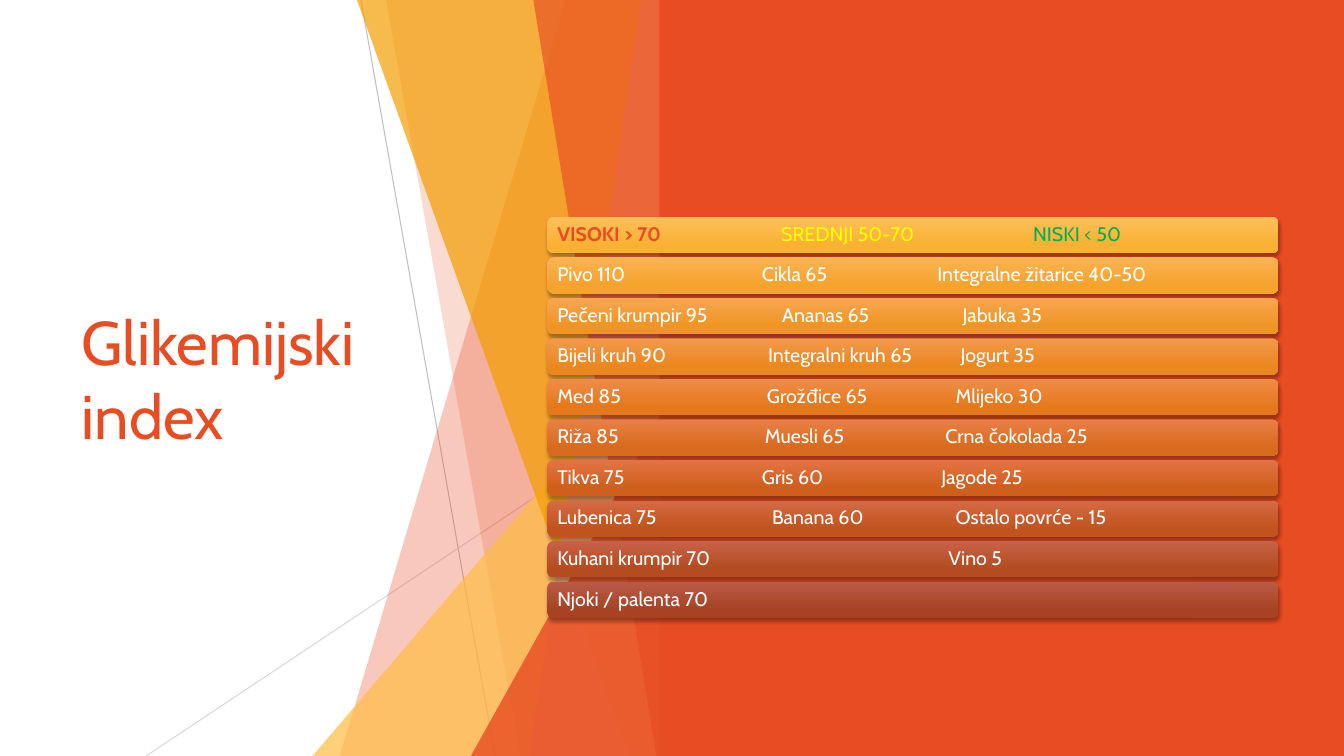
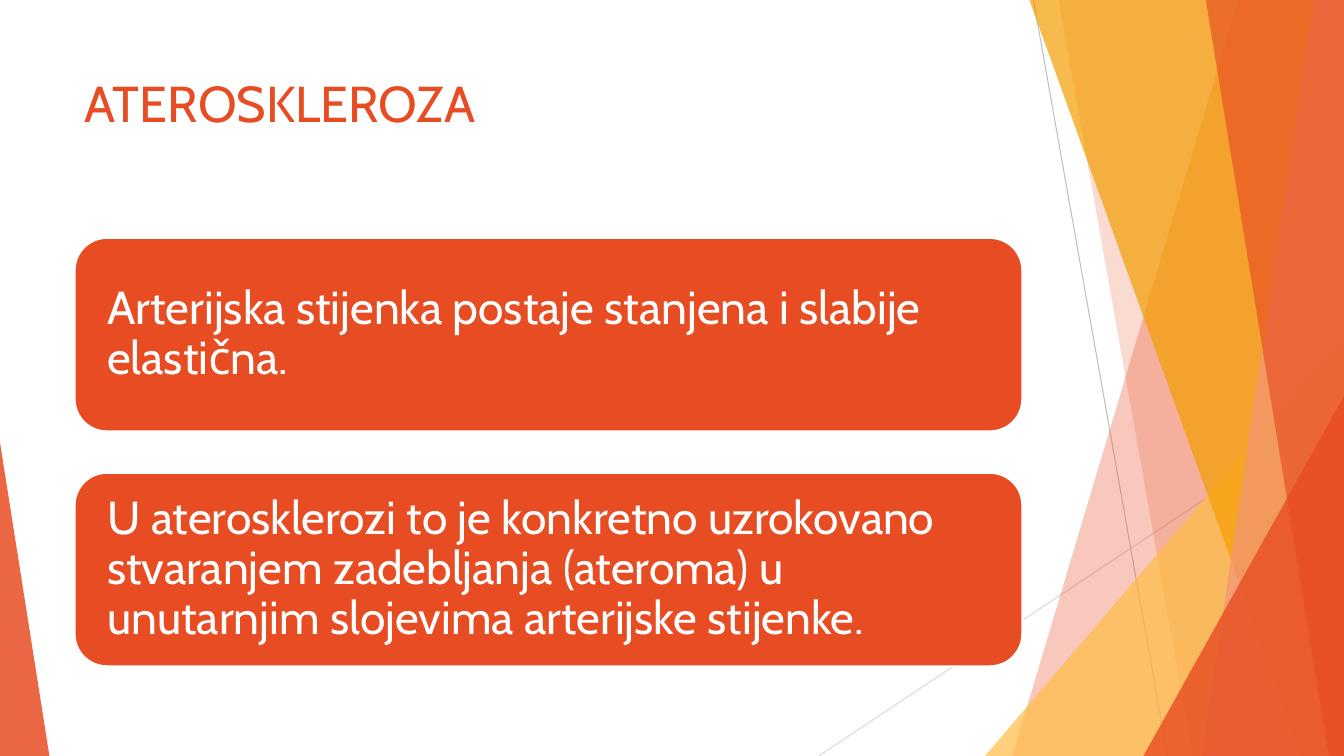
from lxml import etree
from pptx import Presentation
from pptx.dml.color import RGBColor
from pptx.enum.shapes import MSO_CONNECTOR, MSO_SHAPE
from pptx.enum.text import MSO_ANCHOR, MSO_AUTO_SIZE, PP_ALIGN
from pptx.oxml.ns import qn
from pptx.util import Inches, Pt

FONT = "Cabin"
SLIDE_W, SLIDE_H = 13.33, 7.5
COLORS = {
    "red": "E84C22", "gold": "FFBD47", "amber": "F49D00", "salmon": "F1947A",
    "white": "FFFFFF", "yellow": "FFFF00", "green": "00B050",
    "gray": "BFBFBF", "pale": "D9D9D9", "black": "000000",
}

RAYS = [((10.25, 0), (11.58, 7.5), "gray"), ((13.33, 4.03), (8.12, 7.5), "pale")]
FACETS = [
    ("band", 12.28, 10.04, "red", 30),
    ("band", 10.5, 11.83, "red", 20),
    ("triangle", 9.77, 3.33, "gold", 72),
    ("band", 10.21, 12.91, "amber", 70),
    ("band", 13.03, 11.92, "salmon", 70),
    ("band", 11.96, 13.18, "red", 65),
    ("triangle", 11.34, 3.93, "red", 80),
]

INDEX_TITLE = "Glikemijski index"
INDEX_ROWS = [
    (["VISOKI > 70", "SREDNJI 50-70", "NISKI < 50"], [2.22, 4.72], "FFC05A", "F8B133"),
    (["Pivo 110", "Cikla 65", "Integralne žitarice 40-50"], [2.03, 3.77], "FBB354", "F4A32C"),
    (["Pečeni krumpir 95", "Ananas 65", "Jabuka 35"], [2.23, 4.02], "F7A650", "EF9525"),
    (["Bijeli kruh 90", "Integralni kruh 65", "Jogurt 35"], [2.09, 4], "F3994C", "EB871F"),
    (["Med 85", "Grožđice 65", "Mlijeko 30"], [2.08, 3.95], "EE8C48", "E5781A"),
    (["Riža 85", "Muesli 65", "Crna čokolada 25"], [2.06, 3.85], "E97F45", "D86B1D"),
    (["Tikva 75", "Gris 60", "Jagode 25"], [2.03, 3.81], "E37343", "CF5F1B"),
    (["Lubenica 75", "Banana 60", "Ostalo povrće - 15"], [2.13, 3.95], "D56A44", "C1541E"),
    (["Kuhani krumpir 70", "Vino 5"], [3.88], "C76246", "B44B21"),
    (["Njoki / palenta 70"], [], "BA5B47", "A74323"),
]
HEADER_COLORS = ["red", "yellow", "green"]
FIRST_BAR, LAST_BAR = 2.15, 5.77

ARTERY_TITLE = "ATEROSKLEROZA"
ARTERY_POINTS = [
    "Arterijska stijenka postaje stanjena i slabije elastična.",
    "U aterosklerozi to je konkretno uzrokovano stvaranjem zadebljanja "
    "(ateroma) u unutarnjim slojevima arterijske stijenke.",
]


def rgb(name):
    return RGBColor.from_string(COLORS.get(name, name))


def style_run(r, size, color, bold=False):
    r.font.name, r.font.size, r.font.bold = FONT, Pt(size), bold
    r.font.color.rgb = rgb(color)


def paint(sp, color, alpha=100):
    sp.shadow.inherit = False
    sp.line.fill.background()
    sp.fill.solid()
    sp.fill.fore_color.rgb = rgb(color)
    if alpha < 100:
        clr = sp.fill._xPr.find(".//" + qn("a:srgbClr"))
        etree.SubElement(clr, qn("a:alpha")).set("val", str(alpha * 1000))


def add_box(s, kind, x, y, w, h):
    return s.shapes.add_shape(kind, Inches(x), Inches(y), Inches(w), Inches(h))


def add_triangle(s, x, y, w, apex, color, alpha):
    sp = add_box(s, MSO_SHAPE.ISOSCELES_TRIANGLE, x, y, w, SLIDE_H - y)
    sp.adjustments[0] = apex
    paint(sp, color, alpha)


def add_band(s, top, bottom, right, color, alpha):
    fb = s.shapes.build_freeform(Inches(top), 0)
    corners = [(right, 0), (right, SLIDE_H), (bottom, SLIDE_H)]
    fb.add_line_segments([(Inches(x), Inches(y)) for x, y in corners])
    paint(fb.convert_to_shape(), color, alpha)


def add_facets(s, dx=0):
    for (x1, y1), (x2, y2), color in RAYS:
        ray = s.shapes.add_connector(MSO_CONNECTOR.STRAIGHT, Inches(x1 + dx), Inches(y1),
                                     Inches(x2 + dx), Inches(y2))
        ray.line.color.rgb, ray.line.width = rgb(color), Pt(0.75)
        etree.SubElement(ray._element.spPr, qn("a:effectLst"))
    right = SLIDE_W + dx
    for kind, a, b, color, alpha in FACETS:
        if kind == "band":
            add_band(s, a + dx, b + dx, right, color, alpha)
        else:
            add_triangle(s, a + dx, b, SLIDE_W - a, 1, color, alpha)


def set_title(s, text, size, x, y, w, h, anchor):
    sp = s.shapes.title
    sp.left, sp.top, sp.width, sp.height = (Inches(v) for v in (x, y, w, h))
    tf = sp.text_frame
    tf.text = text
    tf.word_wrap, tf.auto_size, tf.vertical_anchor = True, MSO_AUTO_SIZE.NONE, anchor
    p = tf.paragraphs[0]
    p.alignment = PP_ALIGN.LEFT
    style_run(p.runs[0], size, "red")


def box_paragraph(sp, inset):
    tf = sp.text_frame
    tf.word_wrap, tf.vertical_anchor = True, MSO_ANCHOR.MIDDLE
    tf.margin_left = tf.margin_right = Inches(inset)
    tf.margin_top = tf.margin_bottom = 0
    p = tf.paragraphs[0]
    p.alignment, p.line_spacing = PP_ALIGN.LEFT, 0.9
    return p


def add_bar_shadow(sp):
    effects = sp._element.spPr.find(qn("a:effectLst"))
    shadow = etree.SubElement(effects, qn("a:outerShdw"), blurRad=str(Pt(3)),
                              dist=str(Pt(2)), dir="5400000", rotWithShape="0")
    clr = etree.SubElement(shadow, qn("a:srgbClr"), val=COLORS["black"])
    etree.SubElement(clr, qn("a:alpha"), val="35000")


def add_index_bar(s, y, cells, tabs, light, dark, colors, bold):
    sp = add_box(s, MSO_SHAPE.ROUNDED_RECTANGLE, 5.43, y, 7.25, 0.36)
    sp.shadow.inherit = False
    sp.line.fill.background()
    sp.fill.gradient()
    sp.fill.gradient_angle = 270
    for stop, pos, color in zip(sp.fill.gradient_stops, (0, 0.78), (light, dark)):
        stop.position, stop.color.rgb = pos, rgb(color)
    add_bar_shadow(sp)
    p = box_paragraph(sp, 0.08)
    if tabs:
        tab_list = etree.SubElement(p._p.get_or_add_pPr(), qn("a:tabLst"))
        for pos in tabs:
            etree.SubElement(tab_list, qn("a:tab"), pos=str(Inches(pos)), algn="l")
    for i, (cell, color) in enumerate(zip(cells, colors)):
        r = p.add_run()
        r.text = cell if i == len(cells) - 1 else cell + "\t"
        style_run(r, 14, color, bold and i == 0)


def build_index(s):
    set_title(s, INDEX_TITLE, 44, 0.71, 1.51, 3.88, 4.48, MSO_ANCHOR.MIDDLE)
    add_facets(s, -6.67)
    panel = add_box(s, MSO_SHAPE.RECTANGLE, 6.54, 0, SLIDE_W - 6.54, SLIDE_H)
    paint(panel, "red")
    s.shapes._spTree.remove(panel._element)
    s.shapes._spTree.append(panel._element)
    pitch = (LAST_BAR - FIRST_BAR) / (len(INDEX_ROWS) - 1)
    for i, (cells, tabs, light, dark) in enumerate(INDEX_ROWS):
        colors = HEADER_COLORS if i == 0 else ["white"] * len(cells)
        add_index_bar(s, FIRST_BAR + i * pitch, cells, tabs, light, dark, colors, i == 0)


def build_artery(s):
    add_facets(s)
    add_triangle(s, 0, 4.39, 0.49, 0, "red", 85)
    set_title(s, ARTERY_TITLE, 36, 0.74, 0.67, 9.4, 1.44, MSO_ANCHOR.TOP)
    for i, text in enumerate(ARTERY_POINTS):
        sp = add_box(s, MSO_SHAPE.ROUNDED_RECTANGLE, 0.74, 2.36 + i * 2.33, 9.4, 1.92)
        paint(sp, "red")
        sp.line.color.rgb, sp.line.width = rgb("white"), Pt(1.5)
        p = box_paragraph(sp, 0.23)
        p.text = text
        style_run(p.runs[0], 33, "white")


def main():
    prs = Presentation()
    prs.slide_width, prs.slide_height = Inches(SLIDE_W), Inches(SLIDE_H)
    for build in (build_index, build_artery):
        build(prs.slides.add_slide(prs.slide_layouts[5]))
    prs.save("out.pptx")


if __name__ == "__main__":
    main()
